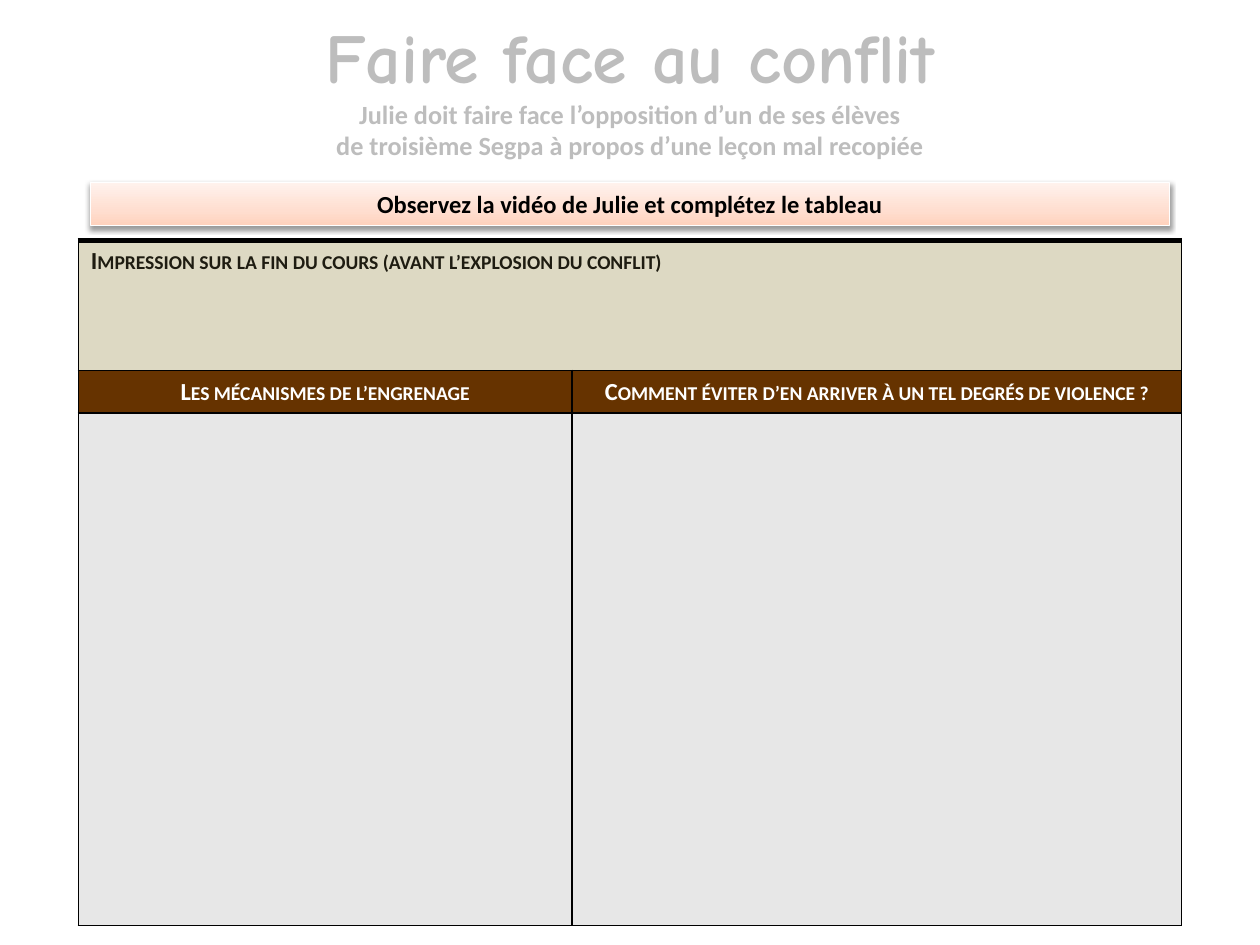
from copy import deepcopy

from lxml import etree
from pptx import Presentation
from pptx.dml.color import RGBColor
from pptx.enum import shapes, text
from pptx.oxml import ns
from pptx.util import Pt

BLACK = RGBColor(0x00, 0x00, 0x00)
WHITE = RGBColor(0xFF, 0xFF, 0xFF)
GREY = RGBColor(0xBD, 0xBD, 0xBD)
INK = RGBColor(0x1E, 0x1C, 0x11)
SAND = RGBColor(0xDD, 0xD9, 0xC3)
BROWN = RGBColor(0x66, 0x33, 0x00)
PALE = RGBColor(0xE7, 0xE7, 0xE7)
PEACH = [(0, RGBColor(0xFF, 0xD2, 0xBD)), (0.35, RGBColor(0xFF, 0xDE, 0xD0)),
         (1, RGBColor(0xFF, 0xF2, 0xED))]

# Content
HEADING = [
    ("Faire face au conflit", "Comic Neue", 40),
    ("Julie doit faire face l’opposition d’un de ses élèves", "Calibri", 15),
    ("de troisième Segpa à propos d’une leçon mal recopiée", "Calibri", 15),
]
TASK = "Observez la vidéo de Julie et complétez le tableau"
ROWS = [  # height, fill, text colour, alignment, cell texts
    (74.4, SAND, INK, text.PP_ALIGN.LEFT,
     ["Impression sur la fin du cours (avant l’explosion du conflit)", ""]),
    (24, BROWN, WHITE, text.PP_ALIGN.CENTER,
     ["Les mécanismes de l’engrenage",
      "Comment éviter d’en arriver à un tel degrés de violence ?"]),
    (293, PALE, INK, text.PP_ALIGN.LEFT, ["", ""]),
]
COLUMNS = [282, 348.5]


def add_node(parent, tag, **attrs):
    return etree.SubElement(parent, ns.qn(tag), **attrs)


def style(p, font, size, color, align):
    p.alignment = align
    for f in [p.font] + [r.font for r in p.runs]:
        f.name, f.size, f.bold = font, Pt(size), True
        f.color.rgb = color


def set_borders(cell, top):
    tcPr = cell._tc.get_or_add_tcPr()
    widths = {"a:lnL": 1, "a:lnR": 1, "a:lnT": top, "a:lnB": 1}
    for i, (tag, width) in enumerate(widths.items()):
        ln = add_node(tcPr, tag, w=str(Pt(width)))
        add_node(add_node(ln, "a:solidFill"), "a:srgbClr", val=str(BLACK))
        tcPr.insert(i, ln)


prs = Presentation()
prs.slide_width, prs.slide_height = Pt(720), Pt(540)
s = prs.slides.add_slide(prs.slide_layouts[5])

# Table
frame = s.shapes.add_table(len(ROWS), len(COLUMNS), Pt(44.75), Pt(137.3),
                           Pt(sum(COLUMNS)), Pt(sum(row[0] for row in ROWS)))
table = frame.table
for column, width in zip(table.columns, COLUMNS):
    column.width = Pt(width)
for i, (height, fill, color, align, texts) in enumerate(ROWS):
    table.rows[i].height = Pt(height)
    for cell, label in zip(table.rows[i].cells, texts):
        cell.fill.solid()
        cell.fill.fore_color.rgb = fill
        set_borders(cell, 3 if i == 0 else 1)
        p = cell.text_frame.paragraphs[0]
        p.text = label
        style(p, "Calibri", 14, color, align)
        for r in p.runs:
            r.font._element.set("cap", "small")
table.cell(0, 0).merge(table.cell(0, 1))

# Heading
title = s.shapes.title
title.left, title.top, title.width, title.height = Pt(0), Pt(4.3), Pt(720), Pt(92.2)
tf = title.text_frame
tf.text = "\n".join(line for line, _, _ in HEADING)
tf.auto_size = text.MSO_AUTO_SIZE.NONE
tf.vertical_anchor = text.MSO_ANCHOR.TOP
for p, (_, font, size) in zip(tf.paragraphs, HEADING):
    style(p, font, size, GREY, text.PP_ALIGN.CENTER)

# Task banner
banner = s.shapes.add_shape(shapes.MSO_SHAPE.RECTANGLE,
                            Pt(51.8), Pt(104.4), Pt(616.4), Pt(24.5))
banner.fill.gradient()
banner.fill.gradient_angle = 90
stops = banner.fill._xPr.find(ns.qn("a:gradFill")).find(ns.qn("a:gsLst"))
stops.insert(1, deepcopy(stops[0]))
for stop, (position, color) in zip(banner.fill.gradient_stops, PEACH):
    stop.position = position
    stop.color.rgb = color
banner.line.color.rgb = WHITE
banner.line.width = Pt(0.75)
banner.shadow.inherit = False
effects = banner._element.spPr.find(ns.qn("a:effectLst"))
shadow = add_node(effects, "a:outerShdw", blurRad=str(Pt(3.1)), dist=str(Pt(1.6)),
                  dir="5400000", rotWithShape="0")
add_node(add_node(shadow, "a:srgbClr", val=str(BLACK)), "a:alpha", val="38000")
tf = banner.text_frame
tf.word_wrap = True
tf.text = TASK
style(tf.paragraphs[0], "Calibri", 14, BLACK, text.PP_ALIGN.CENTER)

prs.save("out.pptx")
